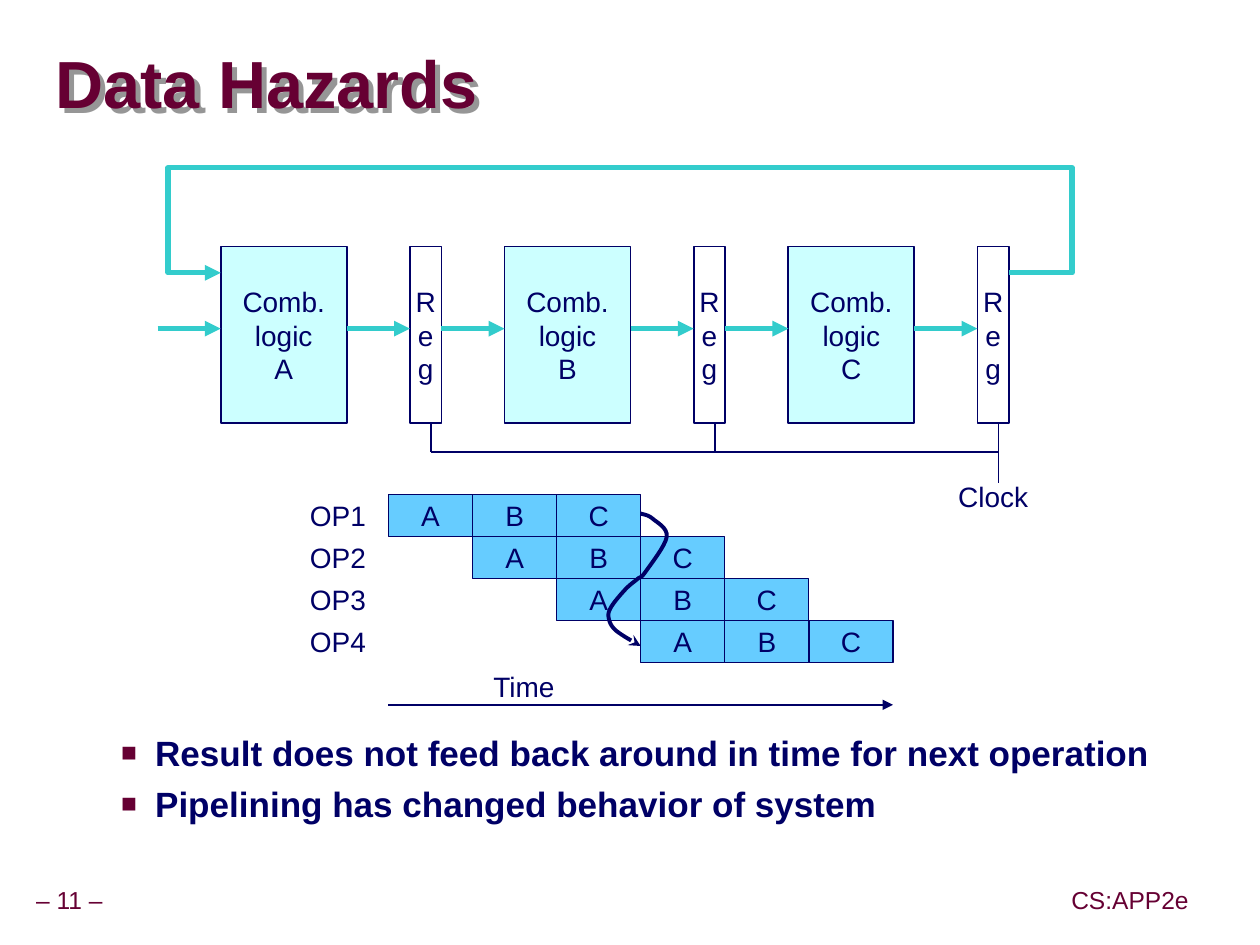
from dataclasses import dataclass

from lxml import etree
from pptx import Presentation, util as u
from pptx.dml.color import RGBColor
from pptx.enum import shapes, text
from pptx.oxml.ns import qn

MAROON = RGBColor(0x66, 0x00, 0x33)
NAVY = RGBColor(0x00, 0x00, 0x66)
TEAL = RGBColor(0x33, 0xCC, 0xCC)
PALE_CYAN = RGBColor(0xCC, 0xFF, 0xFF)
SKY = RGBColor(0x66, 0xCC, 0xFF)
WHITE = RGBColor(0xFF, 0xFF, 0xFF)
SHADOW_GREY = RGBColor(0x96, 0x96, 0x96)
FONT = "Arial"
CENTER, LEFT, RIGHT = text.PP_ALIGN.CENTER, text.PP_ALIGN.LEFT, text.PP_ALIGN.RIGHT


@dataclass
class Grid:
    """A region of the slide measured in columns and rows, in inches."""
    left: float
    top: float
    col: float
    row: float

    def point(self, x, y):
        return u.Inches(self.left + x * self.col), u.Inches(self.top + y * self.row)

    def box(self, x, y, width, height):
        return (*self.point(x, y), u.Inches(width * self.col), u.Inches(height * self.row))


def add_run(paragraph, words, size, color=NAVY, bold=False):
    run = paragraph.add_run()
    run.text = words
    run.font.name, run.font.size, run.font.bold = FONT, u.Pt(size), bold
    run.font.color.rgb = color


def set_margins(frame, across, down):
    frame.margin_left = frame.margin_right = u.Inches(across)
    frame.margin_top = frame.margin_bottom = u.Inches(down)


def write_lines(frame, lines, align, size=16, color=NAVY, anchor=text.MSO_ANCHOR.MIDDLE):
    frame.word_wrap = False
    frame.vertical_anchor = anchor
    for i, line in enumerate(lines):
        paragraph = frame.paragraphs[0] if i == 0 else frame.add_paragraph()
        paragraph.alignment = align
        add_run(paragraph, line, size, color)


def add_label(slide, box, words, align):
    label = slide.shapes.add_textbox(*box)
    write_lines(label.text_frame, [words], align, anchor=text.MSO_ANCHOR.TOP)


def add_block(slide, box, lines, fill, line_width=None, align=CENTER):
    block = slide.shapes.add_shape(shapes.MSO_SHAPE.RECTANGLE, *box)
    block.shadow.inherit = False
    block.fill.solid()
    block.fill.fore_color.rgb = fill
    if line_width:
        block.line.color.rgb = NAVY
        block.line.width = u.Pt(line_width)
    else:
        block.line.fill.background()
    write_lines(block.text_frame, lines, align)


def style_line(shape, color, width, head=None):
    shape.line.color.rgb = color
    shape.line.width = u.Pt(width)
    if head:
        etree.SubElement(shape.line._get_or_add_ln(), qn("a:tailEnd"), type=head)


def add_line(slide, start, end, color=NAVY, width=1, head=None):
    line = slide.shapes.add_connector(shapes.MSO_CONNECTOR.STRAIGHT, *start, *end)
    style_line(line, color, width, head)
    etree.SubElement(line._element.spPr, qn("a:effectLst"))


def add_route(slide, points, color, width, head):
    """Draw an open outline through the points."""
    builder = slide.shapes.build_freeform(*points[0], scale=1.0)
    builder.add_line_segments(points[1:], close=False)
    route = builder.convert_to_shape()
    route.shadow.inherit = False
    route.fill.background()
    style_line(route, color, width, head)


def smooth(knots, steps=8):
    """Return points on a Catmull-Rom curve through the knots."""
    ends = [knots[0], *knots, knots[-1]]
    points = [knots[0]]
    for a, b, c, d in zip(ends, ends[1:], ends[2:], ends[3:]):
        for t in (step / steps for step in range(1, steps + 1)):
            points.append(tuple(
                (2 * q + (r - p) * t + (2 * p - 5 * q + 4 * r - s) * t ** 2
                 + (3 * q - p - 3 * r + s) * t ** 3) / 2
                for p, q, r, s in zip(a, b, c, d)))
    return points


def add_title(slide, grid):
    title = slide.shapes.title
    title.left, title.top, title.width, title.height = grid.box(0, 0, 1, 1)
    frame = title.text_frame
    frame.auto_size = text.MSO_AUTO_SIZE.NONE
    frame.vertical_anchor = text.MSO_ANCHOR.MIDDLE
    set_margins(frame, 0, 0)
    heading = frame.paragraphs[0]
    heading.alignment, heading.line_spacing = LEFT, 0.87
    add_run(heading, "Data Hazards", 38, MAROON, bold=True)
    # With no fill or line on the box, its shadow falls from the letters.
    title.fill.background()
    title.line.fill.background()
    effects = etree.SubElement(title._element.spPr, qn("a:effectLst"))
    shadow = etree.SubElement(effects, qn("a:outerShdw"), dist=str(u.Inches(0.06)),
                              dir="2700000", algn="ctr", rotWithShape="0")
    etree.SubElement(shadow, qn("a:srgbClr"), val=str(SHADOW_GREY))


def add_pipeline(slide, grid):
    stage_pitch, flow_y, block_top, block_height = 9, 5.1, 2.5, 5.6
    bus_y, tap_x = 9, 8.67
    block_bottom = block_top + block_height
    for i, stage in enumerate("ABC"):
        x = i * stage_pitch
        add_block(slide, grid.box(x + 2, block_top, 4, block_height),
                  ["Comb.", "logic", stage], PALE_CYAN, 1)
        add_block(slide, grid.box(x + 8, block_top, 1, block_height), "Reg", WHITE, 1)
        for flow_x in (x, x + 6):
            add_line(slide, grid.point(flow_x, flow_y), grid.point(flow_x + 2, flow_y),
                     TEAL, 3, "triangle")
        tap_end = bus_y + 1 if stage == "C" else bus_y
        add_line(slide, grid.point(x + tap_x, block_bottom), grid.point(x + tap_x, tap_end))
    add_line(slide, grid.point(tap_x, bus_y), grid.point(tap_x + 2 * stage_pitch, bus_y))
    add_label(slide, grid.box(24.5, 9.7, 4, 1.4), "Clock", CENTER)
    feedback = [(27, 3.33), (29, 3.33), (29, 0), (0.33, 0), (0.33, 3.33), (2, 3.33)]
    add_route(slide, [grid.point(*corner) for corner in feedback], TEAL, 3, "triangle")


def add_timing(slide, grid):
    for row in range(4):
        add_block(slide, grid.box(-1.5, row, 1.38, 1), [f"OP{row + 1}"], WHITE, align=RIGHT)
        for col, stage in enumerate("ABC", start=row):
            add_block(slide, grid.box(col, row, 1, 1), [stage], SKY, 0.75)
    add_label(slide, grid.box(1.1, 4.02, 1.2, 1.08), "Time", LEFT)
    add_line(slide, grid.point(0, 5), grid.point(6, 5), head="triangle")
    hazard = [(3, 0.45), (3.14, 0.57), (3.31, 1), (3.06, 1.83), (2.96, 2.01),
              (2.82, 2.25), (2.65, 2.67), (2.62, 2.94), (2.71, 3.24), (3, 3.6)]
    add_route(slide, [grid.point(*knot) for knot in smooth(hazard)], NAVY, 2.25, "stealth")


def add_conclusions(slide, grid):
    body = slide.placeholders[1]
    body.left, body.top, body.width, body.height = grid.box(0, 0, 1, 1)
    frame = body.text_frame
    frame.auto_size = text.MSO_AUTO_SIZE.NONE
    conclusions = ["Result does not feed back around in time for next operation",
                   "Pipelining has changed behavior of system"]
    for i, conclusion in enumerate(conclusions):
        item = frame.paragraphs[0] if i == 0 else frame.add_paragraph()
        item.level, item.space_before = 1, u.Pt(5)
        properties = item._p.get_or_add_pPr()
        properties.set("marL", str(u.Inches(0.81)))
        properties.set("indent", str(u.Inches(-0.27)))
        color = etree.SubElement(properties, qn("a:buClr"))
        etree.SubElement(color, qn("a:srgbClr"), val=str(MAROON))
        etree.SubElement(properties, qn("a:buSzPct"), val="75000")
        etree.SubElement(properties, qn("a:buFont"), typeface=FONT)
        etree.SubElement(properties, qn("a:buChar"), char="■")
        add_run(item, conclusion, 20, bold=True)


def add_footer(slide, grid):
    for x, width, words in ((0, 0.66, "– 11 –"), (8.22, 1.04, "CS:APP2e")):
        footer = slide.shapes.add_textbox(*grid.box(x, 0, width, 1))
        set_margins(footer.text_frame, 0.05, 0.05)
        write_lines(footer.text_frame, [words], CENTER, 14, MAROON)
        footer.text_frame.paragraphs[0].line_spacing = 0.9


def main():
    deck = Presentation()
    deck.slide_width, deck.slide_height = u.Inches(9.99), u.Inches(7.49)
    slide = deck.slides.add_slide(deck.slide_layouts[1])
    add_title(slide, Grid(0.44, 0.27, 9.52, 0.85))
    add_pipeline(slide, Grid(1.25, 1.33, 0.25, 0.25))
    add_timing(slide, Grid(3.08, 3.92, 2 / 3, 1 / 3))
    add_conclusions(slide, Grid(0.32, 5.75, 9.07, 1.28))
    add_footer(slide, Grid(0.22, 6.99, 1, 0.31))
    deck.save("out.pptx")


if __name__ == "__main__":
    main()
